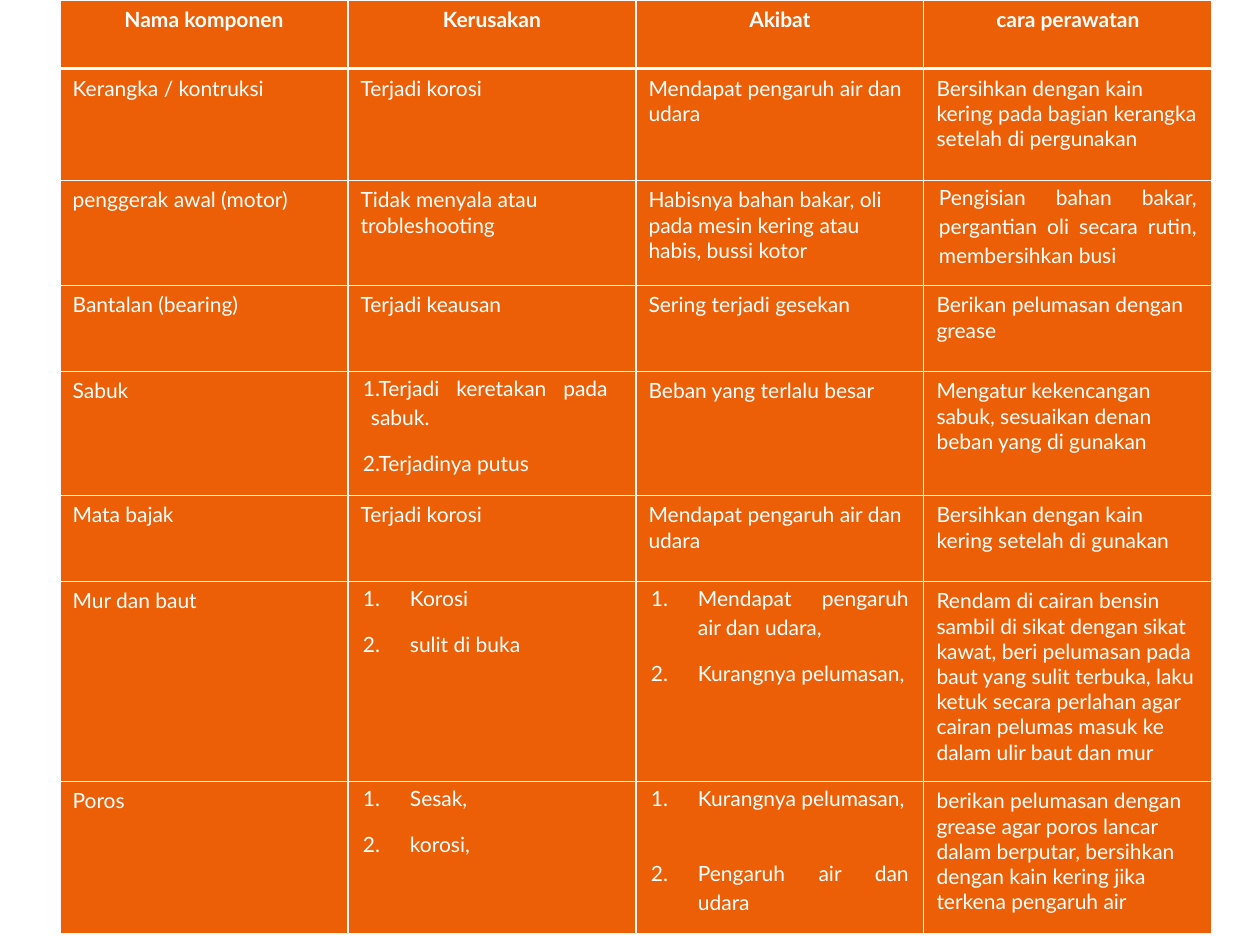
"""Build the maintenance table slide: component, damage, cause and care."""
from dataclasses import dataclass

from lxml.etree import SubElement
from pptx import Presentation
from pptx.dml.color import RGBColor
from pptx.enum.text import PP_ALIGN as Align
from pptx.oxml.ns import qn
from pptx.table import _Cell as Cell
from pptx.util import Emu, Pt

PX = 914400 / 126
COLORS = {"cell": "ED5F07", "text": "FFFFFF", "grid": "F9F9F9", "header_rule": "FFFFFF"}
FONT = {"name": "Lato", "size": Pt(12)}
LOOSE = {"alignment": Align.JUSTIFY, "line_spacing": 1.15, "space_after": Pt(10)}
TIGHT_MARGINS = {"margin_left": 15, "margin_right": 15, "margin_top": 0, "margin_bottom": 0}
TABLE_LEFT, COLUMN_WIDTH = 60, 288
ROW_HEIGHTS = [69, 112, 105, 86, 124, 86, 200, 152]


@dataclass(frozen=True)
class Loose:
    """Justified paragraphs with open line spacing and optional numbering."""
    items: tuple[str, ...]
    left: int = 0
    indent: int = 0
    right: int = 0
    numbered: bool = False
    gap: float = 10


def numbered(*items: str, gap: float = 10) -> Loose:
    """Return a numbered list with a hanging indent."""
    return Loose(items, left=47, indent=-47, numbered=True, gap=gap)


HEADERS = ["Nama komponen", "Kerusakan", "Akibat", "cara perawatan"]
ROWS = [
    ["Kerangka / kontruksi", "Terjadi korosi", "Mendapat pengaruh air dan udara",
     "Bersihkan dengan kain kering pada bagian kerangka setelah di pergunakan"],
    ["penggerak awal (motor)", "Tidak menyala atau trobleshooting",
     "Habisnya bahan bakar, oli pada mesin kering atau habis, bussi kotor",
     Loose(("Pengisian bahan bakar, pergantian oli secara rutin, membersihkan busi",))],
    ["Bantalan (bearing)", "Terjadi keausan", "Sering terjadi gesekan",
     "Berikan pelumasan dengan grease"],
    ["Sabuk",
     Loose(("1.Terjadi keretakan pada sabuk.", "2.Terjadinya putus"), left=8, indent=-16, right=13),
     "Beban yang terlalu besar",
     "Mengatur kekencangan sabuk, sesuaikan denan beban yang di gunakan"],
    ["Mata bajak", "Terjadi korosi", "Mendapat pengaruh air dan udara",
     "Bersihkan dengan kain kering setelah di gunakan"],
    ["Mur dan baut", numbered("Korosi", "sulit di buka"),
     numbered("Mendapat pengaruh air dan udara,", "Kurangnya pelumasan,"),
     "Rendam di cairan bensin sambil di sikat dengan sikat kawat, beri pelumasan pada baut "
     "yang sulit terbuka, laku ketuk secara perlahan agar cairan pelumas masuk ke dalam "
     "ulir baut dan mur"],
    ["Poros", numbered("Sesak,", "korosi,"),
     numbered("Kurangnya pelumasan,", "Pengaruh air dan udara", gap=26.5),
     "berikan pelumasan dengan grease agar poros lancar dalam berputar, bersihkan dengan "
     "kain kering jika terkena pengaruh air"],
]


def px(length: int) -> Emu:
    """Turn pixels into EMU."""
    return Emu(round(length * PX))


def apply(target: object, values: dict) -> None:
    """Set each named attribute on the target."""
    for name, value in values.items():
        setattr(target, name, value)


def add_border(cell: Cell, side: str, color: str, width: float) -> None:
    """Draw one side of a cell."""
    line = SubElement(cell._tc.get_or_add_tcPr(), qn(f"a:ln{side}"), w=str(Pt(width)))
    fill = SubElement(line, qn("a:solidFill"))
    SubElement(fill, qn("a:srgbClr"), val=COLORS[color])


def style_cell(cell: Cell, row: int) -> None:
    """Draw the grid around a cell and fill it."""
    heavy = {0: "B", 1: "T"}.get(row)
    for side in "LRTB":
        color, width = ("header_rule", 2) if side == heavy else ("grid", 0.75)
        add_border(cell, side, color, width)
    cell.fill.solid()
    cell.fill.fore_color.rgb = RGBColor.from_string(COLORS["cell"])


def write_cell(cell: Cell, content: str | Loose, header: bool) -> None:
    """Write plain text or a loose list into a cell."""
    loose = isinstance(content, Loose)
    items = content.items if loose else (content,)
    if loose:
        apply(cell, {name: px(value) for name, value in TIGHT_MARGINS.items()})
    frame = cell.text_frame
    for index, text in enumerate(items):
        para = frame.add_paragraph() if index else frame.paragraphs[0]
        para.alignment = Align.CENTER if header else Align.LEFT
        if loose:
            apply(para, LOOSE)
            if index < len(items) - 1:
                para.space_after = Pt(content.gap)
            props = para._p.get_or_add_pPr()
            sides = {"marL": content.left, "marR": content.right, "indent": content.indent}
            for name, value in sides.items():
                props.set(name, str(px(value)))
            if content.numbered:
                SubElement(props, qn("a:buAutoNum"), type="arabicPeriod")
        span = para.add_run()
        span.text = text
        apply(span.font, FONT | {"bold": header})
        span.font.color.rgb = RGBColor.from_string(COLORS["text"])


def main() -> None:
    """Build and save the deck."""
    deck = Presentation()
    apply(deck, {"slide_width": px(1260), "slide_height": px(945)})
    page = deck.slides.add_slide(deck.slide_layouts[6])
    contents = [HEADERS, *ROWS]
    table = page.shapes.add_table(
        len(contents), len(HEADERS), px(TABLE_LEFT), 0,
        px(COLUMN_WIDTH * len(HEADERS)), px(sum(ROW_HEIGHTS))).table
    table.horz_banding = False
    for column in table.columns:
        column.width = px(COLUMN_WIDTH)
    for row, (height, entries) in enumerate(zip(ROW_HEIGHTS, contents)):
        table.rows[row].height = px(height)
        for column, content in enumerate(entries):
            cell = table.cell(row, column)
            style_cell(cell, row)
            write_cell(cell, content, header=row == 0)
    deck.save("out.pptx")


if __name__ == "__main__":
    main()
